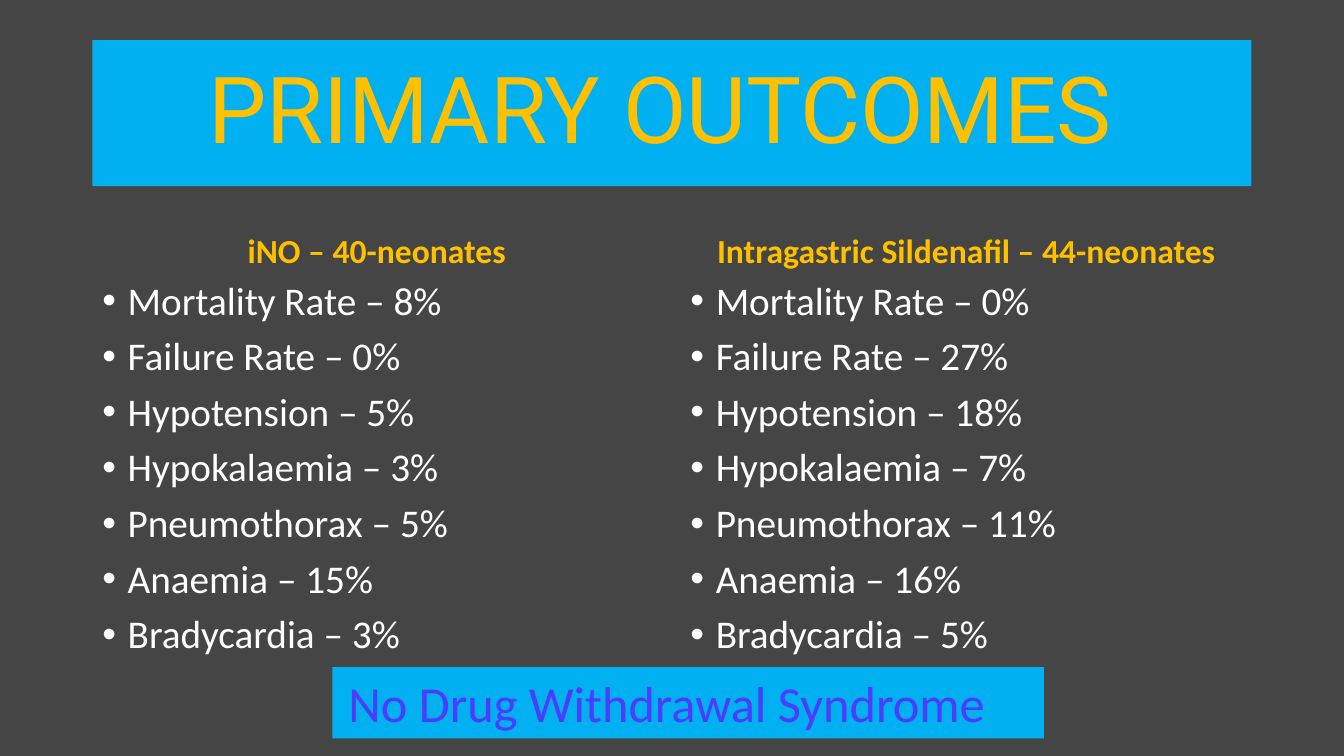
import pptx
import pptx.util
import pptx.dml.color
import pptx.enum.shapes
import pptx.enum.text
from lxml import etree

Cm, Pt = pptx.util.Cm, pptx.util.Pt
RGB = pptx.dml.color.RGBColor.from_string
ALIGN = pptx.enum.text.PP_ALIGN
ANCHOR = pptx.enum.text.MSO_ANCHOR
NS = "{http://schemas.openxmlformats.org/drawingml/2006/main}"
HUES = {"back": "454545", "band": "00B0F0", "gold": "FFC000",
        "white": "FFFFFF", "violet": "4C3DFE"}

deck = pptx.Presentation()
deck.slide_width, deck.slide_height = Cm(33.87), Cm(19.05)
slide = deck.slides.add_slide(deck.slide_layouts[6])
slide.background.fill.solid()
slide.background.fill.fore_color.rgb = RGB(HUES["back"])


def write(lines, x, y, w, h, size, hue, font="Calibri", bold=False, fill=None,
          align=ALIGN.LEFT, anchor=ANCHOR.TOP, bullet=False, lead=0.9,
          left=0.25, right=0.25):
    """Place a text box, or a filled band, holding one paragraph per line."""
    area = [Cm(n) for n in (x, y, w, h)]
    if fill:
        box = slide.shapes.add_shape(pptx.enum.shapes.MSO_SHAPE.RECTANGLE, *area)
        box.shadow.inherit = False
        box.fill.solid()
        box.fill.fore_color.rgb = RGB(HUES[fill])
        box.line.fill.background()
    else:
        box = slide.shapes.add_textbox(*area)
    frame = box.text_frame
    frame.word_wrap = True
    frame.vertical_anchor = anchor
    frame.margin_left, frame.margin_right = Cm(left), Cm(right)
    for i, line in enumerate(lines):
        para = frame.paragraphs[0] if i == 0 else frame.add_paragraph()
        para.alignment = align
        para.line_spacing = lead
        if i:
            para.space_before = Pt(9.5)
        if bullet:
            props = para._p.get_or_add_pPr()
            props.set("marL", str(Cm(0.64)))
            props.set("indent", str(-Cm(0.64)))
            etree.SubElement(props, NS + "buFont", typeface="Arial")
            etree.SubElement(props, NS + "buChar", char="•")
        run = para.add_run()
        run.text = line
        run.font.name, run.font.size, run.font.bold = font, Pt(size), bold
        run.font.color.rgb = RGB(HUES[hue])


# Title band
write(["PRIMARY OUTCOMES"], 2.33, 1.01, 29.21, 3.68, 66, "gold", font="Roboto",
      fill="band", align=ALIGN.CENTER, anchor=ANCHOR.MIDDLE, right=0.83)

# Two treatment groups, with their rates in percent
names = ["Mortality Rate", "Failure Rate", "Hypotension", "Hypokalaemia",
         "Pneumothorax", "Anaemia", "Bradycardia"]
groups = [
    ("iNO – 40-neonates", 2.33, 14.33, [8, 0, 5, 3, 5, 15, 3]),
    ("Intragastric Sildenafil – 44-neonates", 17.15, 14.4,
     [0, 27, 18, 7, 11, 16, 5]),
]
for head, x, w, rates in groups:
    write([head], x, 4.68, w, 2.28, 24, "gold", bold=True,
          align=ALIGN.CENTER, anchor=ANCHOR.BOTTOM)
    rows = [f"{name} – {rate}%" for name, rate in zip(names, rates)]
    write(rows, x, 6.96, w, 10.24, 28, "white", bullet=True)

# Closing band
write(["No Drug Withdrawal Syndrome"], 8.38, 16.81, 17.93, 1.8, 36, "violet",
      fill="band", lead=1.0, left=0.4)

deck.save("out.pptx")
